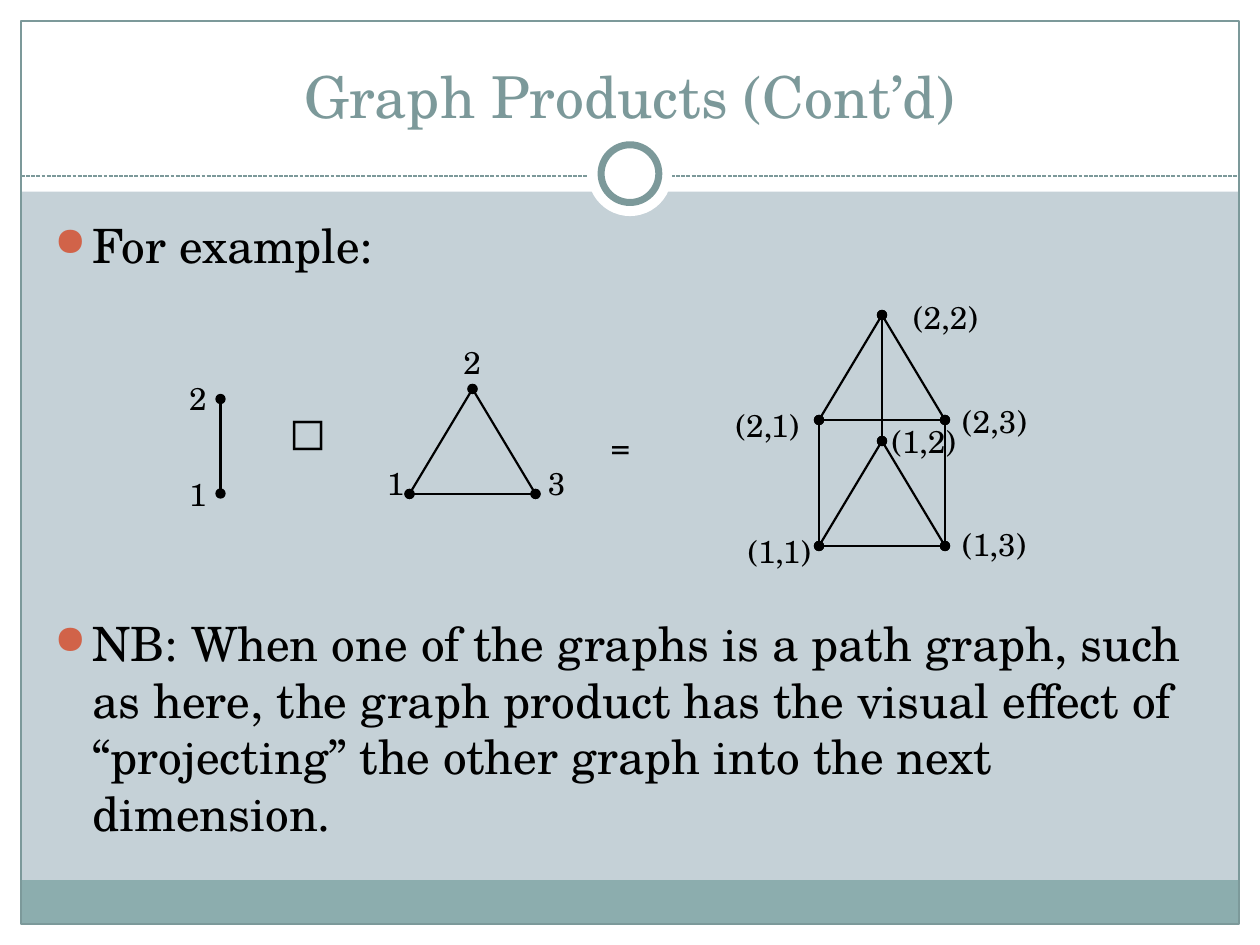
import lxml.etree
import pptx
import pptx.dml.color
import pptx.enum.dml
import pptx.enum.shapes
import pptx.enum.text
import pptx.oxml.ns
import pptx.util

Pt = pptx.util.Pt
Shape = pptx.enum.shapes.MSO_SHAPE
Align = pptx.enum.text.PP_ALIGN
Anchor = pptx.enum.text.MSO_ANCHOR
Fit = pptx.enum.text.MSO_AUTO_SIZE
qn = pptx.oxml.ns.qn

theme = {
    "font": "TeX Gyre Schola",
    "title": 33, "body": 27, "label": 18, "operator": 36,
    "paper": "FFFFFF", "panel": "C5D1D7", "band": "8CADAE",
    "accent": "7C999A", "bullet": "D16349", "ink": "000000",
}


def color(name):
    return pptx.dml.color.RGBColor.from_string(theme[name])


def write(area, texts, size, ink="ink", **frame_format):
    box = page.shapes.add_textbox(*map(Pt, area))
    frame = box.text_frame
    for name, value in frame_format.items():
        setattr(frame, name, value)
    for index, text in enumerate(texts):
        para = frame.paragraphs[0] if index == 0 else frame.add_paragraph()
        span = para.add_run()
        span.text = text
        for name, value in {"name": theme["font"], "size": Pt(theme[size])}.items():
            setattr(span.font, name, value)
        span.font.color.rgb = color(ink)
    return frame


def connect(shapes, start, end, ink="ink", width=1.25, dots=True):
    edge = shapes.add_connector(
        pptx.enum.shapes.MSO_CONNECTOR.STRAIGHT, *map(Pt, (*start, *end)))
    edge.line.color.rgb = color(ink)
    edge.line.width = Pt(width)
    outline = edge.line._get_or_add_ln()
    for tag in ("a:headEnd", "a:tailEnd") if dots else ():
        lxml.etree.SubElement(outline, qn(tag), type="oval")
    lxml.etree.SubElement(edge._element.spPr, qn("a:effectLst"))
    return edge


deck = pptx.Presentation()
deck.slide_width, deck.slide_height = Pt(720), Pt(540)
page = deck.slides.add_slide(deck.slide_layouts[6])
page.background.fill.solid()
page.background.fill.fore_color.rgb = color("panel")

decor = [
    (Shape.RECTANGLE, (0, 528, 720, 12), "paper", 0),
    (Shape.RECTANGLE, (0, 0, 720, 109.5), "paper", 0),
    (Shape.RECTANGLE, (0, 0, 12, 540), "paper", 0),
    (Shape.RECTANGLE, (708, 0, 12, 540), "paper", 0),
    (Shape.RECTANGLE, (11.75, 503, 696, 25), "band", 0),
    (Shape.RECTANGLE, (12, 12, 696, 516), None, 0.75),
    (None, None, None, None),
    (Shape.OVAL, (336, 75.5, 48, 48), "paper", 0),
    (Shape.OVAL, (343.5, 82.75, 33, 33), "paper", 4),
]
for preset, area, fill, width in decor:
    if preset is None:
        divider = connect(page.shapes, (12, 100.6), (708, 100.6), "accent", 0.75, False)
        divider.line.dash_style = pptx.enum.dml.MSO_LINE.SQUARE_DOT
        continue
    shape = page.shapes.add_shape(preset, *map(Pt, area))
    shape.shadow.inherit = False
    if fill:
        shape.fill.solid()
        shape.fill.fore_color.rgb = color(fill)
    else:
        shape.fill.background()
    if width:
        shape.line.color.rgb = color("accent")
        shape.line.width = Pt(width)
    else:
        shape.line.fill.background()

title = write((24, 18, 672, 60), ["Graph Products (Cont’d)"], "title", "accent",
              word_wrap=True, vertical_anchor=Anchor.BOTTOM)
title.paragraphs[0].alignment = Align.CENTER

body = write((24, 120, 669.5, 360), [
    "For example:",
    "NB: When one of the graphs is a path graph, such as here, the graph product "
    "has the visual effect of “projecting” the other graph into the next dimension.",
], "body", word_wrap=True)
for para, gap in zip(body.paragraphs, (5.4, 195)):
    para.space_before = Pt(gap)
    properties = para._p.get_or_add_pPr()
    for name, value in {"marL": Pt(21.6), "indent": -Pt(21.6)}.items():
        properties.set(name, str(int(value)))
    tint = lxml.etree.SubElement(properties, qn("a:buClr"))
    lxml.etree.SubElement(tint, qn("a:srgbClr"), val=theme["bullet"])
    lxml.etree.SubElement(properties, qn("a:buSzPct"), val="85000")
    lxml.etree.SubElement(properties, qn("a:buChar"), char="●")

connect(page.shapes, (126, 228), (126, 282))

half_base, height, depth = 36, 60, 72
product_x, product_y = 504, 180
for x, y in ((270, 222.25), (product_x, product_y), (product_x, product_y + depth)):
    triangle = page.shapes.add_group_shape()
    apex = (x, y)
    left, right = (x - half_base, y + height), (x + half_base, y + height)
    for start, end in ((apex, left), (apex, right), (left, right)):
        connect(triangle.shapes, start, end)

for offset, drop in ((-half_base, height), (0, 0), (half_base, height)):
    x, y = product_x + offset, product_y + drop
    connect(page.shapes, (x, y), (x, y + depth), dots=False)

labels = [
    ("=", 342, 240.5, 25),
    ("1", 101, 268, 24.5), ("2", 101, 213, 24.5),
    ("1", 214, 261.5, 24.5), ("2", 257.75, 192.25, 24.5), ("3", 306, 261.5, 24.5),
    ("(2,1)", 413.25, 228.25, 52), ("(1,3)", 542.75, 296.5, 52),
    ("(2,3)", 542.75, 226, 52), ("(2,2)", 514.75, 167, 52),
    ("(1,2)", 502.5, 237.5, 52), ("(1,1)", 420.25, 300.25, 52),
]
for text, x, y, width in labels:
    write((x, y, width, 29), [text], "label",
          word_wrap=False, auto_size=Fit.SHAPE_TO_FIT_TEXT)
write((156, 222.5, 36, 51), ["□"], "operator",
      word_wrap=True, auto_size=Fit.SHAPE_TO_FIT_TEXT)

deck.save("out.pptx")
